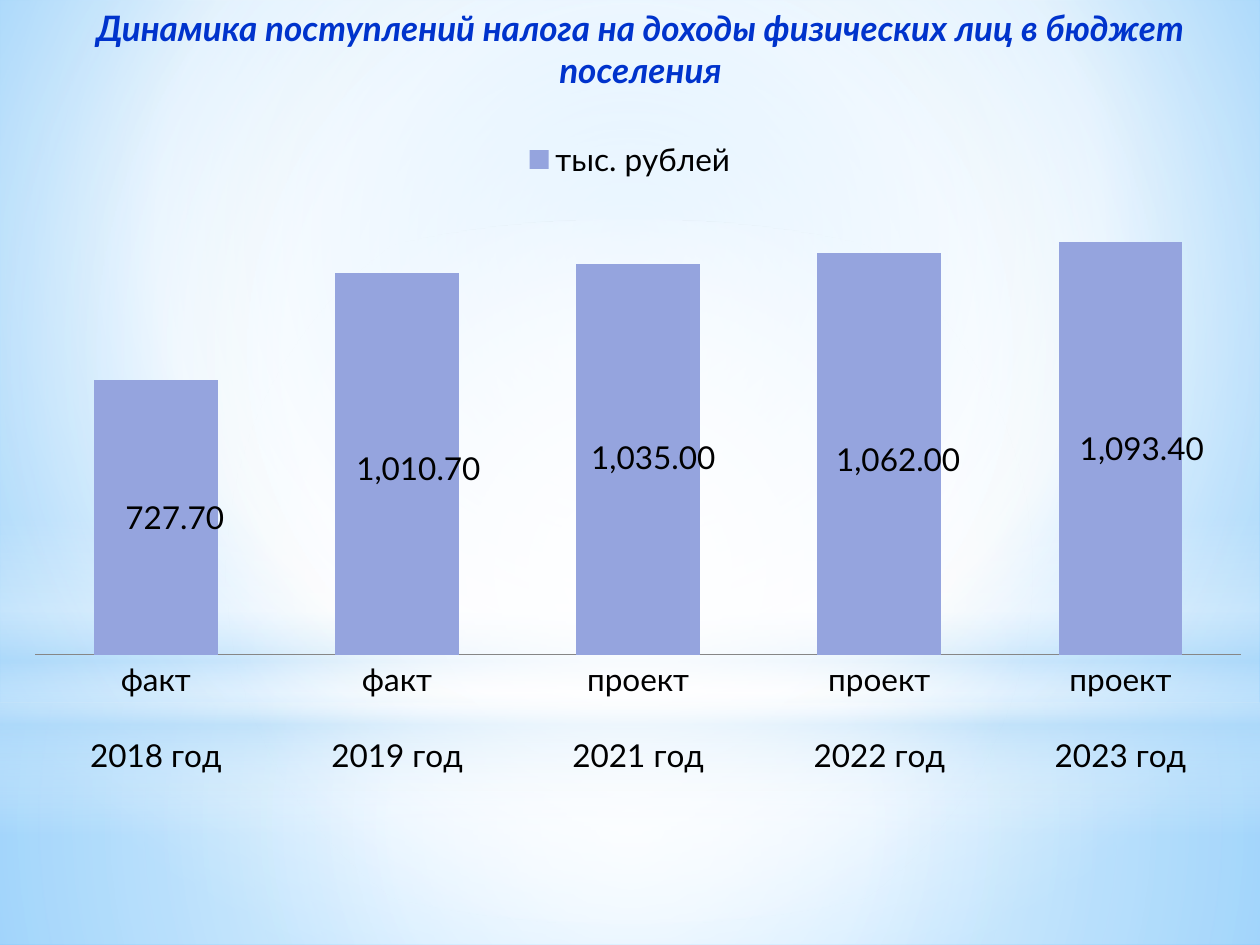
from lxml import etree
from pptx import Presentation
from pptx import util as u
from pptx.chart.data import CategoryChartData
from pptx.dml.color import RGBColor
from pptx.enum import chart as ch, shapes, text
from pptx.oxml import parse_xml
from pptx.oxml.ns import nsdecls, qn

PX = 7257.14  # EMU per px, 126 px to the inch
W, H = 1260, 945
FONT = "Lato"
BLUE = RGBColor(0x00, 0x33, 0xCC)
BLACK = RGBColor(0, 0, 0)
GREY = RGBColor(0x86, 0x86, 0x86)
BAR = RGBColor(0x95, 0xA4, 0xDE)
WHITE = RGBColor(255, 255, 255)
SKY = RGBColor(0xB4, 0xDC, 0xFA)
BG_EDGE = RGBColor(0x9E, 0xD5, 0xFF)
BG_END = RGBColor(0x5B, 0xB9, 0xFF)
RADIAL = (50, 50, 50, 50)


def px(*lengths):
    return [u.Emu(round(n * PX)) for n in lengths]


def set_gradient(fill, parent, stops, focus):
    """Stops are (position %, colour, opacity %); no focus means top to bottom."""
    fill.solid()
    gs = "".join(f'<a:gs pos="{pos * 1000}"><a:srgbClr val="{colour}">'
                 f'<a:alpha val="{alpha * 1000}"/></a:srgbClr></a:gs>'
                 for pos, colour, alpha in stops)
    if focus:
        l, t, r, b = (n * 1000 for n in focus)
        way = (f'<a:path path="circle"><a:fillToRect l="{l}" t="{t}" '
               f'r="{r}" b="{b}"/></a:path>')
    else:
        way = '<a:lin ang="5400000" scaled="0"/>'
    grad = parse_xml(f'<a:gradFill {nsdecls("a")} rotWithShape="1">'
                     f'<a:gsLst>{gs}</a:gsLst>{way}</a:gradFill>')
    solid = next(parent.iter(qn("a:solidFill")))
    solid.getparent().replace(solid, grad)


prs = Presentation()
prs.slide_width, prs.slide_height = px(W, H)
s = prs.slides.add_slide(prs.slide_layouts[6])

# Background
set_gradient(s.background.fill, s.element,
             [(0, BG_EDGE, 100), (60, WHITE, 100), (100, BG_END, 100)],
             (20, 10, 20, 60))

# Layers of light: kind, top, height, stops, focus
RECT, OVAL = shapes.MSO_SHAPE.RECTANGLE, shapes.MSO_SHAPE.OVAL
layers = [
    (RECT, 703, 242, [(0, WHITE, 91), (37, WHITE, 76), (100, SKY, 79)], RADIAL),
    (RECT, 0, 703, [(0, WHITE, 89), (48, WHITE, 62), (100, SKY, 79)], RADIAL),
    (RECT, 519, 315, [(0, WHITE, 0), (29, WHITE, 30), (45, SKY, 40),
                      (55, WHITE, 26), (65, SKY, 60), (100, WHITE, 0)], None),
    (OVAL, 220, 703, [(0, WHITE, 100), (56, WHITE, 0)], RADIAL),
]
for kind, top, height, stops, focus in layers:
    sp = s.shapes.add_shape(kind, *px(0, top, W, height))
    sp.shadow.inherit = False
    sp.line.fill.background()
    set_gradient(sp.fill, sp.element.spPr, stops, focus)

# Title
tf = s.shapes.add_textbox(*px(42, 0, 1197, 145)).text_frame
tf.word_wrap = True
tf.vertical_anchor = text.MSO_ANCHOR.TOP
tf.text = "Динамика поступлений налога на доходы физических лиц в бюджет поселения"
p = tf.paragraphs[0]
p.alignment = text.PP_ALIGN.CENTER
font = p.runs[0].font
font.name, font.size, font.bold, font.italic = FONT, u.Pt(20), True, True
font.color.rgb = BLUE

# Chart: status, year, value, label shift from the bar centre in px
rows = [
    ("факт", "2018 год", 727.7, 19, 0),
    ("факт", "2019 год", 1010.7, 22, 4),
    ("проект", "2021 год", 1035, 15, -2),
    ("проект", "2022 год", 1062, 19, 5),
    ("проект", "2023 год", 1093.4, 21, 0),
]
CHART_H = 713
data = CategoryChartData(number_format="#,##0.00")
data.categories = [f"{status}\n\n{year}" for status, year, *_ in rows]
data.add_series("тыс. рублей", [row[2] for row in rows])
chart = s.shapes.add_chart(ch.XL_CHART_TYPE.COLUMN_STACKED,
                           *px(0, 125, W, CHART_H), data).chart
chart.has_title = False
chart.font.name, chart.font.size = FONT, u.Pt(18)
chart.font.color.rgb = BLACK
chart.has_legend = True
chart.legend.position = ch.XL_LEGEND_POSITION.TOP
chart.legend.include_in_layout = False

# Axes
cat, val = chart.category_axis, chart.value_axis
cat.major_tick_mark = cat.minor_tick_mark = ch.XL_TICK_MARK.NONE
cat.format.line.color.rgb = GREY
cat.format.line.width = u.Pt(0.75)
val.minimum_scale, val.maximum_scale = 0, 1200
val.has_major_gridlines = False
val.visible = False

# Bars
plot = chart.plots[0]
plot.gap_width, plot.overlap, plot.vary_by_categories = 95, 100, False
series = plot.series[0]
series.format.fill.solid()
series.format.fill.fore_color.rgb = BAR
labels = series.data_labels
labels.show_value = True
labels.number_format, labels.number_format_is_linked = "#,##0.00", False

# Value labels moved off the bar centres
for i, (*_, dx, dy) in enumerate(rows):
    font = series.points[i].data_label.font
    font.name, font.size = FONT, u.Pt(18)
    font.color.rgb = BLACK
    label = labels._element.findall(qn("c:dLbl"))[i]
    label.insert(1, parse_xml(
        f'<c:layout {nsdecls("c")}><c:manualLayout><c:x val="{dx / W:.3f}"/>'
        f'<c:y val="{dy / CHART_H:.3f}"/></c:manualLayout></c:layout>'))

# Inner plot area
area = chart._chartSpace.chart.plotArea
for old in area.findall(qn("c:layout")):
    area.remove(old)
layout = etree.Element(qn("c:layout"))
manual = etree.SubElement(layout, qn("c:manualLayout"))
for tag, value in [("layoutTarget", "inner"), ("xMode", "edge"), ("yMode", "edge"),
                   ("x", "0.028"), ("y", "0.107"), ("w", "0.957"), ("h", "0.636")]:
    etree.SubElement(manual, qn(f"c:{tag}")).set("val", value)
area.insert(0, layout)

prs.save("out.pptx")
